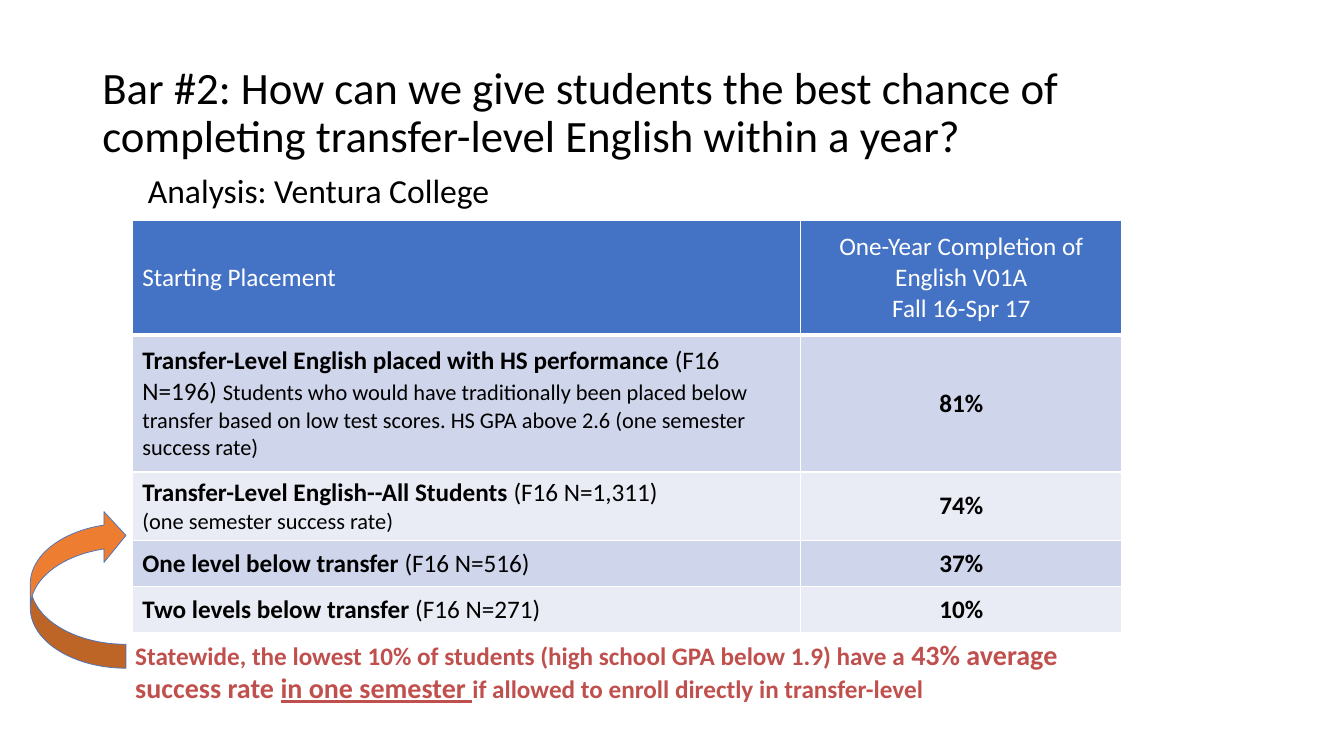
from dataclasses import dataclass

import pptx
import pptx.dml.color
import pptx.enum.shapes
import pptx.enum.text
import pptx.oxml
import pptx.oxml.ns
import pptx.util

FONT = "Calibri"
BLACK, WHITE, RED, ORANGE, BLUE = "000000", "FFFFFF", "C0504D", "ED7D31", "4472C4"
BANDS = ("CFD5EA", "E9EBF5")
LEFT = pptx.enum.text.PP_ALIGN.LEFT
CENTER = pptx.enum.text.PP_ALIGN.CENTER
MIDDLE = pptx.enum.text.MSO_ANCHOR.MIDDLE
TOP = pptx.enum.text.MSO_ANCHOR.TOP


@dataclass(frozen=True)
class Run:
    text: str
    size: float = 18
    color: str = BLACK
    bold: bool = False
    underline: bool = False


@dataclass(frozen=True)
class Box:
    left: float
    top: float
    width: float
    height: float

    def lengths(self) -> tuple:
        return tuple(pptx.util.Pt(value) for value in (self.left, self.top, self.width, self.height))


@dataclass(frozen=True)
class TextBlock:
    box: Box
    runs: list[Run]
    anchor: pptx.enum.text.MSO_ANCHOR = TOP
    line_spacing: float = 1.0


@dataclass(frozen=True)
class TableRow:
    height: float
    fill: str
    placement: list[list[Run]]
    completion: list[list[Run]]


def rgb(value: str) -> pptx.dml.color.RGBColor:
    return pptx.dml.color.RGBColor.from_string(value)


def write_paragraphs(frame, paragraphs: list[list[Run]], alignment=LEFT, line_spacing: float = 1.0) -> None:
    frame.word_wrap = True
    for index, runs in enumerate(paragraphs):
        paragraph = frame.paragraphs[0] if index == 0 else frame.add_paragraph()
        paragraph.alignment = alignment
        paragraph.line_spacing = line_spacing
        for item in runs:
            run = paragraph.add_run()
            run.text = item.text
            run.font.name = FONT
            run.font.size = pptx.util.Pt(item.size)
            run.font.bold = item.bold
            run.font.underline = item.underline
            run.font.color.rgb = rgb(item.color)


def add_text(slide, block: TextBlock) -> None:
    frame = slide.shapes.add_textbox(*block.box.lengths()).text_frame
    frame.vertical_anchor = block.anchor
    write_paragraphs(frame, [block.runs], line_spacing=block.line_spacing)


def set_borders(cell, bottom_width: float) -> None:
    properties = cell._tc.get_or_add_tcPr()
    widths = {"lnL": 1, "lnR": 1, "lnT": 1, "lnB": bottom_width}
    for position, (side, width) in enumerate(widths.items()):
        border = pptx.oxml.parse_xml(
            f'<a:{side} {pptx.oxml.ns.nsdecls("a")} w="{pptx.util.Pt(width)}">'
            f'<a:solidFill><a:srgbClr val="{WHITE}"/></a:solidFill></a:{side}>'
        )
        properties.insert(position, border)


def add_completion_table(slide, box: Box, widths: tuple[float, float], rows: list[TableRow]) -> None:
    table = slide.shapes.add_table(len(rows), len(widths), *box.lengths()).table
    table.first_row = False
    table.horz_banding = False
    for column, width in zip(table.columns, widths):
        column.width = pptx.util.Pt(width)
    for index, row in enumerate(rows):
        table.rows[index].height = pptx.util.Pt(row.height)
        contents = ((row.placement, LEFT), (row.completion, CENTER))
        for cell, (paragraphs, alignment) in zip(table.rows[index].cells, contents):
            cell.vertical_anchor = MIDDLE
            cell.fill.solid()
            cell.fill.fore_color.rgb = rgb(row.fill)
            set_borders(cell, 3 if index == 0 else 1)
            write_paragraphs(cell.text_frame, paragraphs, alignment)


def add_curved_arrow(slide, box: Box) -> None:
    kind = pptx.enum.shapes.MSO_SHAPE.CURVED_DOWN_ARROW
    arrow = slide.shapes.add_shape(kind, *box.lengths())
    arrow.rotation = 270
    for index, value in enumerate((0.25, 0.53, 0.23)):
        arrow.adjustments[index] = value
    arrow.shadow.inherit = False
    arrow.fill.solid()
    arrow.fill.fore_color.rgb = rgb(ORANGE)
    arrow.line.color.rgb = rgb(BLUE)
    arrow.line.width = pptx.util.Pt(0.5)


TEXT_BLOCKS = [
    TextBlock(
        Box(66, 29, 828, 104.5),
        [Run("Bar #2: How can we give students the best chance of completing "
             "transfer-level English within a year?", 32)],
        MIDDLE, 0.9,
    ),
    TextBlock(Box(98.6, 121, 725, 36), [Run("Analysis: Ventura College", 24)], TOP, 0.9),
    TextBlock(
        Box(89.5, 451.5, 712, 55.5),
        [
            Run("Statewide, the lowest 10% of students (high school GPA below 1.9) have a ", 18, RED, True),
            Run("43% average success rate ", 20, RED, True),
            Run("in one semester ", 20, RED, True, True),
            Run("if allowed to enroll directly in transfer-level", 18, RED, True),
        ],
    ),
]

HEADER = TableRow(
    81.5, BLUE,
    [[Run("Starting Placement", color=WHITE)]],
    [[Run("One-Year Completion of English V01A", color=WHITE)], [Run("Fall 16-Spr 17", color=WHITE)]],
)

PLACEMENTS = [
    (98, "81%", [[
        Run("Transfer-Level English placed with HS performance ", bold=True),
        Run("(F16 N=196) "),
        Run("Students who would have traditionally been placed below transfer based on low "
            "test scores. HS GPA above 2.6 (one semester success rate)", 16),
    ]]),
    (49, "74%", [
        [Run("Transfer-Level English--All Students ", bold=True), Run("(F16 N=1,311)")],
        [Run("(one semester success rate)", 16)],
    ]),
    (33, "37%", [[Run("One level below transfer ", bold=True), Run("(F16 N=516)")]]),
    (33, "10%", [[Run("Two levels below transfer ", bold=True), Run("(F16 N=271)")]]),
]


def main() -> None:
    presentation = pptx.Presentation()
    presentation.slide_width = pptx.util.Pt(960)
    presentation.slide_height = pptx.util.Pt(540)
    slide = presentation.slides.add_slide(presentation.slide_layouts[6])
    rows = [HEADER] + [
        TableRow(height, BANDS[index % 2], placement, [[Run(rate, bold=True)]])
        for index, (height, rate, placement) in enumerate(PLACEMENTS)
    ]
    add_completion_table(slide, Box(94.5, 157.7, 707, 294.5), (477.3, 229.7), rows)
    for block in TEXT_BLOCKS:
        add_text(slide, block)
    add_curved_arrow(slide, Box(-0.7, 386.6, 113, 68.4))
    presentation.save("out.pptx")


if __name__ == "__main__":
    main()
